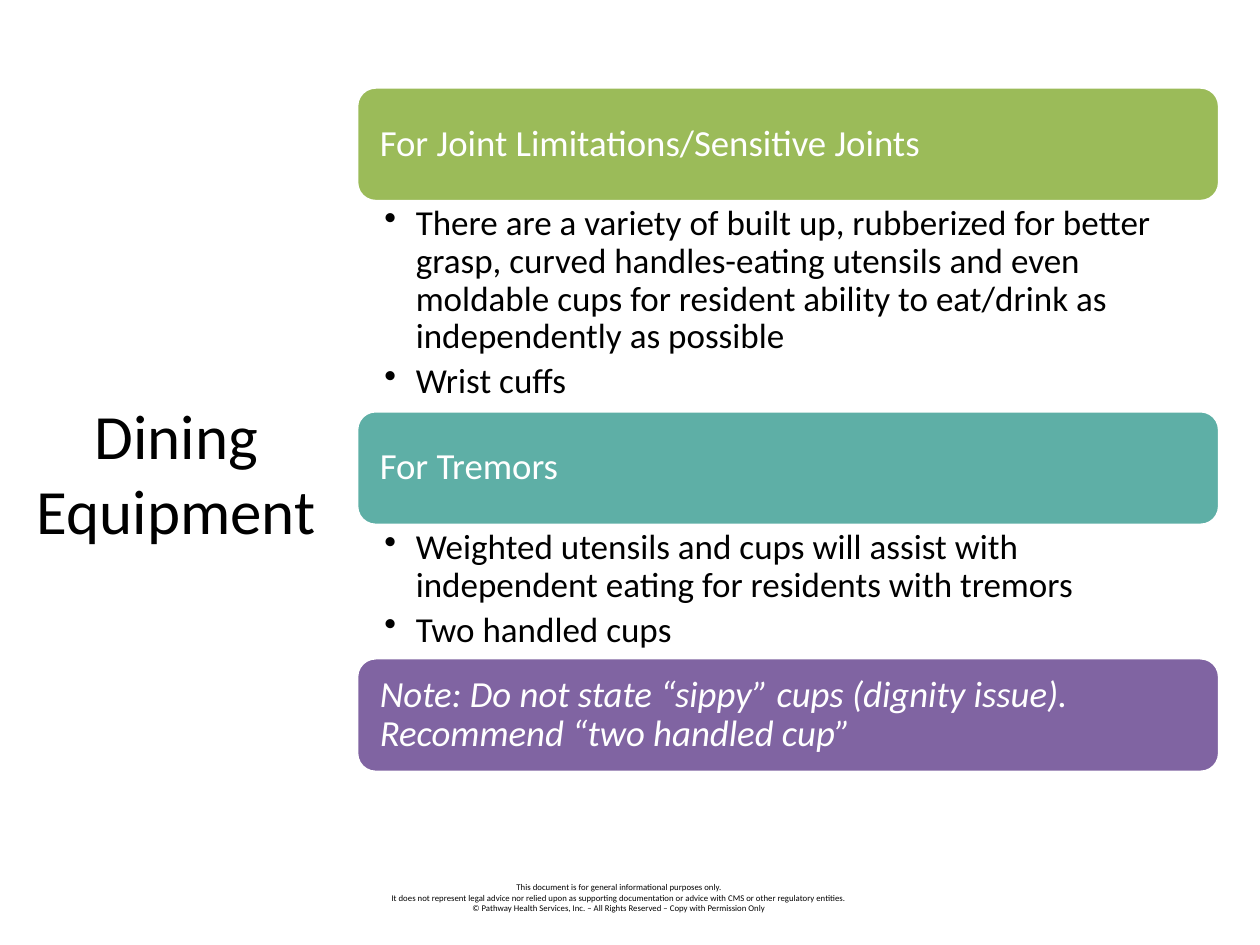
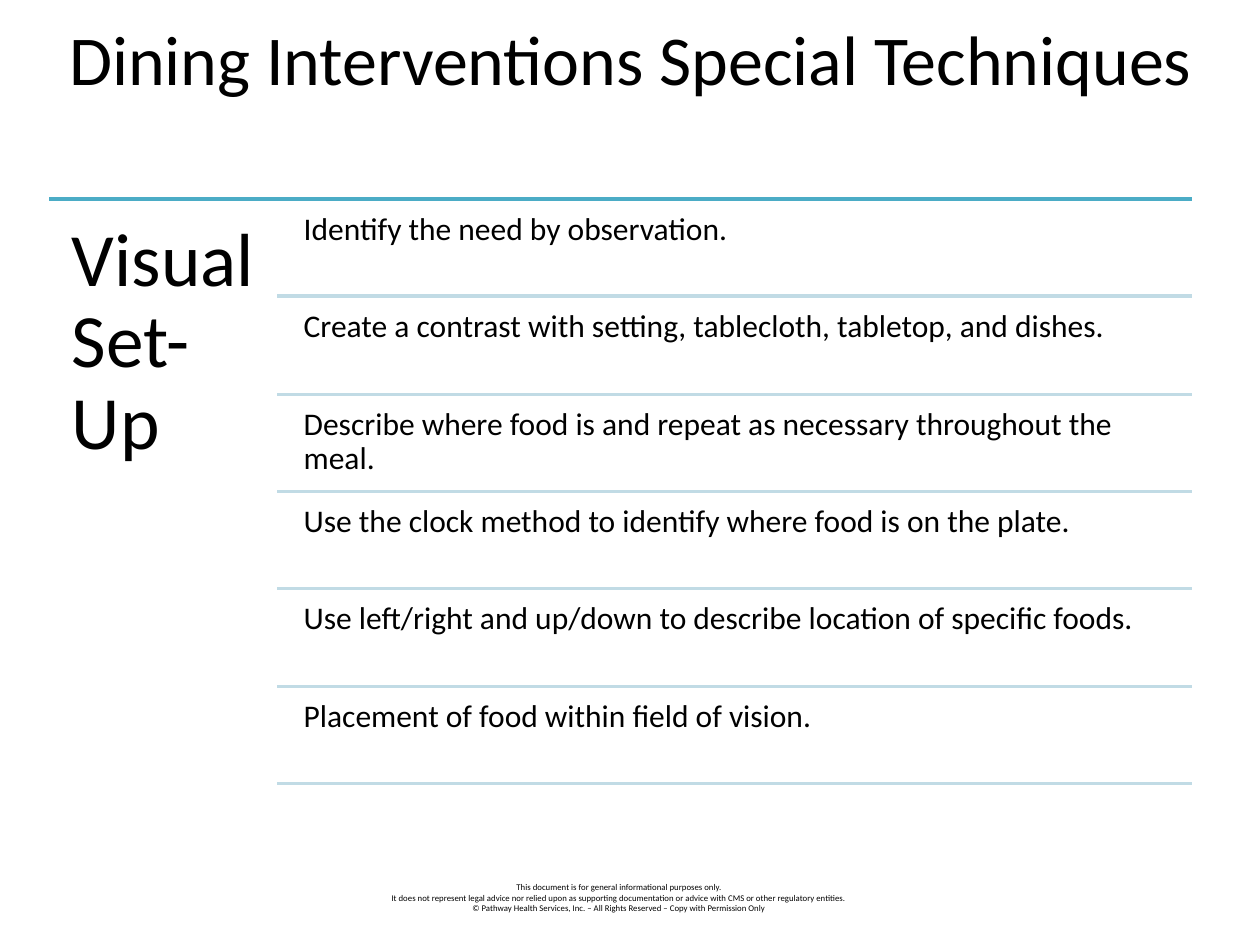
from lxml import etree
from pptx import Presentation
from pptx.dml.color import RGBColor
from pptx.enum.shapes import MSO_CONNECTOR, MSO_SHAPE
from pptx.enum.text import MSO_ANCHOR, PP_ALIGN
from pptx.oxml.ns import qn
from pptx.util import Pt

STRAIGHT = MSO_CONNECTOR.STRAIGHT
ROUNDED = MSO_SHAPE.ROUNDED_RECTANGLE
TOP, MIDDLE = MSO_ANCHOR.TOP, MSO_ANCHOR.MIDDLE
LEFT, CENTER = PP_ALIGN.LEFT, PP_ALIGN.CENTER

PX_PER_INCH = 100
EMU_PER_PX = 914400 // PX_PER_INCH
BULLET_INDENT = 25
FONT = "Calibri"
COLORS = {
    "text": "000000",
    "white": "FFFFFF",
    "green": "9BBB59",
    "teal": "5EAFA6",
    "purple": "8064A2",
    "heading_rule": "4BACC6",
    "row_rule": "C1DBE5",
}

FOOTER_LINES = [
    "This document is for general informational purposes only.",
    "It does not represent legal advice nor relied upon as supporting documentation "
    "or advice with CMS or other regulatory entities.",
    "© Pathway Health Services, Inc. – All Rights Reserved – Copy with Permission Only",
]

EQUIPMENT_SECTIONS = [
    ("green", "For Joint Limitations/Sensitive Joints", False, 166, [
        "There are a variety of built up, rubberized for better grasp, curved "
        "handles-eating utensils and even moldable cups for resident ability to "
        "eat/drink as independently as possible",
        "Wrist cuffs",
    ]),
    ("teal", "For Tremors", False, 105, [
        "Weighted utensils and cups will assist with independent eating for "
        "residents with tremors",
        "Two handled cups",
    ]),
    ("purple", "Note: Do not state “sippy” cups (dignity issue). "
     "Recommend “two handled cup”", True, 0, []),
]

VISUAL_TECHNIQUES = [
    "Identify the need by observation.",
    "Create a contrast with setting, tablecloth, tabletop, and dishes.",
    "Describe where food is and repeat as necessary throughout the meal.",
    "Use the clock method to identify where food is on the plate.",
    "Use left/right and up/down to describe location of specific foods.",
    "Placement of food within field of vision.",
]


def px(value):
    return value * EMU_PER_PX


def set_attributes(target, values):
    for name, value in values.items():
        setattr(target, name, value)


class Deck:
    def __init__(self):
        self.presentation = Presentation()
        set_attributes(self.presentation, {"slide_width": px(1000), "slide_height": px(750)})
        self.slide = None

    def new_slide(self):
        self.slide = self.presentation.slides.add_slide(self.presentation.slide_layouts[6])
        self.text((275, 695, 433, 35), FOOTER_LINES, 5, align=CENTER)

    def fill_text(self, shape, lines, size, color="text", italic=False, align=LEFT,
                  anchor=TOP, insets=(10, 5, 10, 5), spacing=1.0, gap=0, bullets=False):
        left, top, right, bottom = map(px, insets)
        frame = shape.text_frame
        set_attributes(frame, {
            "word_wrap": True, "vertical_anchor": anchor, "margin_left": left,
            "margin_top": top, "margin_right": right, "margin_bottom": bottom,
        })
        for index, line in enumerate(lines):
            paragraph = frame.add_paragraph() if index else frame.paragraphs[0]
            paragraph.text = line
            set_attributes(paragraph, {
                "alignment": align, "line_spacing": spacing, "space_after": Pt(gap),
            })
            if bullets:
                self.bullet(paragraph)
            set_attributes(paragraph.font, {"name": FONT, "size": Pt(size), "italic": italic})
            paragraph.font.color.rgb = RGBColor.from_string(COLORS[color])

    def bullet(self, paragraph):
        properties = paragraph._p.get_or_add_pPr()
        properties.set("marL", str(px(BULLET_INDENT)))
        properties.set("indent", str(-px(BULLET_INDENT)))
        etree.SubElement(properties, qn("a:buChar")).set("char", "•")

    def text(self, box, lines, size, **style):
        shape = self.slide.shapes.add_textbox(*map(px, box))
        self.fill_text(shape, lines, size, **style)

    def title(self, box, line, size):
        self.text(box, [line], size, align=CENTER, anchor=MIDDLE)

    def banner(self, box, line, fill, italic):
        shape = self.slide.shapes.add_shape(ROUNDED, *map(px, box))
        shape.shadow.inherit = False
        shape.fill.solid()
        shape.fill.fore_color.rgb = RGBColor.from_string(COLORS[fill])
        shape.line.color.rgb = RGBColor.from_string(COLORS["white"])
        shape.line.width = Pt(2)
        self.fill_text(shape, [line], 21, color="white", italic=italic, anchor=MIDDLE,
                       insets=(14, 14, 14, 14), spacing=0.9)

    def rule(self, left, right, top, color):
        line = self.slide.shapes.add_connector(STRAIGHT, px(left), px(top), px(right), px(top))
        line.line.color.rgb = RGBColor.from_string(COLORS[color])
        line.line.width = Pt(2)
        etree.SubElement(line._element.spPr, qn("a:effectLst"))


def add_equipment_slide(deck):
    deck.new_slide()
    deck.title((17, 178, 246, 393), "Dining Equipment", 36)
    left, top, width, banner_height = 283, 69, 685, 91
    for fill, heading, italic, body_height, items in EQUIPMENT_SECTIONS:
        deck.banner((left, top, width, banner_height), heading, fill, italic)
        top += banner_height
        if items:
            deck.text((left, top, width, body_height), items, 20, insets=(22, 3, 16, 3),
                      spacing=0.9, gap=4, bullets=True)
        top += body_height


def add_techniques_slide(deck):
    deck.new_slide()
    deck.title((39, 7, 923, 78), "Dining Interventions Special Techniques", 40)
    left, right, top, rows_height = 39, 946, 158, 464
    deck.rule(left, right, top, "heading_rule")
    deck.text((left, top, 181, 467), ["Visual Set-Up"], 43,
              insets=(18, 18, 18, 18), spacing=0.9)
    row_top = top
    for number, technique in enumerate(VISUAL_TECHNIQUES, start=1):
        deck.text((234, row_top + 4, 712, 73), [technique], 18,
                  insets=(7, 7, 7, 7), spacing=0.9)
        row_top = top + round(rows_height * number / len(VISUAL_TECHNIQUES))
        deck.rule(220, right, row_top, "row_rule")


def main():
    deck = Deck()
    add_equipment_slide(deck)
    add_techniques_slide(deck)
    deck.presentation.save("out.pptx")


if __name__ == "__main__":
    main()
